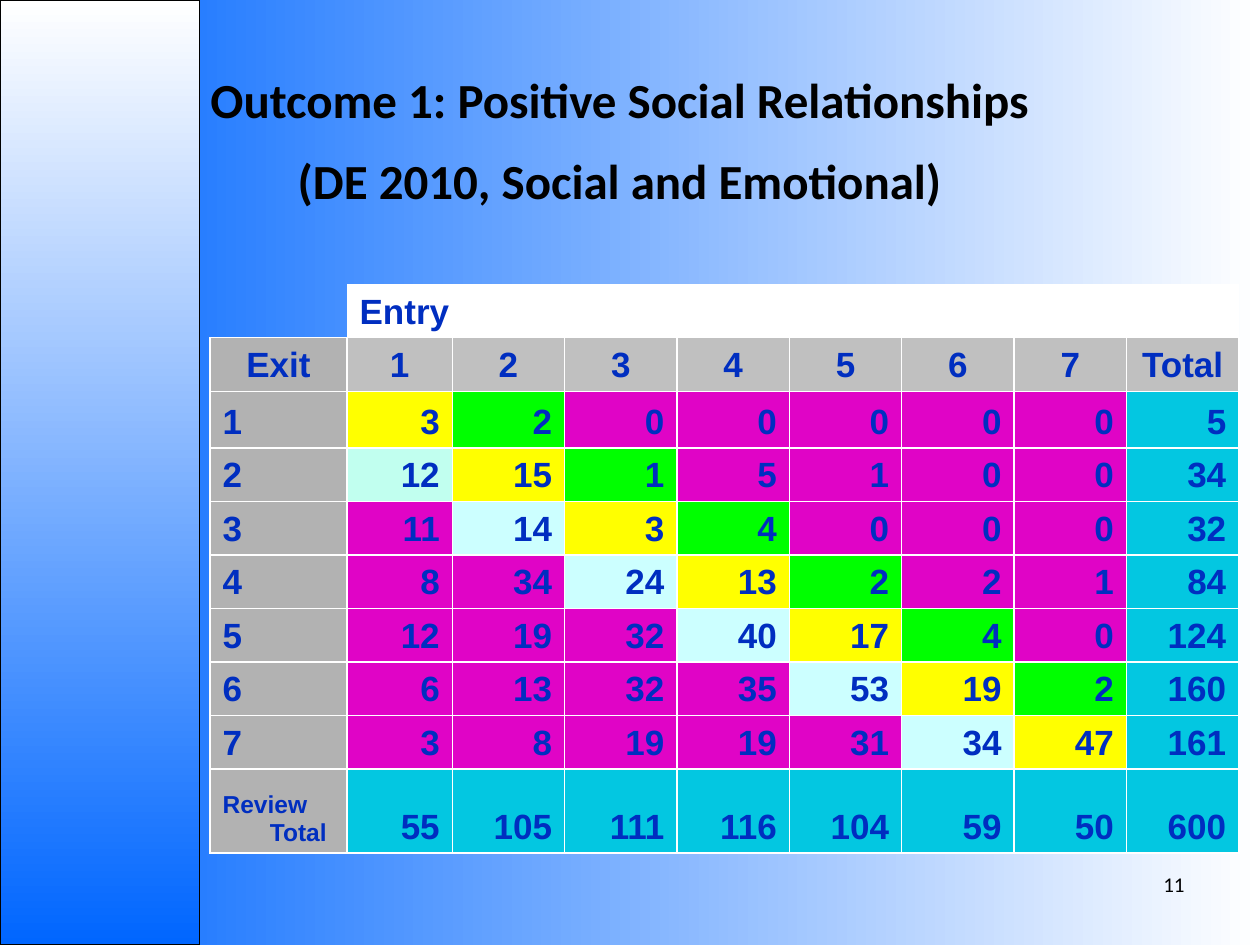
import pptx
import pptx.util
import pptx.dml.color
import pptx.enum.text
import pptx.enum.shapes
import pptx.oxml
import pptx.oxml.ns

Pt = pptx.util.Pt
ALIGN = pptx.enum.text.PP_ALIGN
ANCHOR = pptx.enum.text.MSO_ANCHOR
WHITE, BLACK, BLUE, NAVY = "FFFFFF", "000000", "0066FF", "002EC0"
GRAY, SILVER, CYAN = "B2B2B2", "C0C0C0", "03C7E1"
PINK, YELLOW, GREEN, PALE, MINT = "E004C6", "FFFF00", "00FF00", "CCFFFF", "C1FFEF"
HEADS = ["Exit", "1", "2", "3", "4", "5", "6", "7", "Total"]
COUNTS = [
    [3, 2, 0, 0, 0, 0, 0, 5],
    [12, 15, 1, 5, 1, 0, 0, 34],
    [11, 14, 3, 4, 0, 0, 0, 32],
    [8, 34, 24, 13, 2, 2, 1, 84],
    [12, 19, 32, 40, 17, 4, 0, 124],
    [6, 13, 32, 35, 53, 19, 2, 160],
    [3, 8, 19, 19, 31, 34, 47, 161],
]
TOTALS = [55, 105, 111, 116, 104, 59, 50, 600]


def color(code):
    """Turn a hex string into a colour."""
    return pptx.dml.color.RGBColor.from_string(code)


def shade(fill, first, last, angle):
    """Apply a two-stop linear gradient."""
    fill.gradient()
    fill.gradient_angle = angle
    for stop, code, place in zip(fill.gradient_stops, (first, last), (0, 1)):
        stop.color.rgb = color(code)
        stop.position = place


def style(para, size, name, code, bold, align):
    """Format the runs of a paragraph."""
    para.alignment = align
    for run in para.runs:
        run.font.size = Pt(size)
        run.font.name = name
        run.font.bold = bold
        run.font.color.rgb = color(code)


def panel(slide, left, top, width, height):
    """Draw the shaded side panel."""
    rect = slide.shapes.add_shape(
        pptx.enum.shapes.MSO_SHAPE.RECTANGLE, Pt(left), Pt(top), Pt(width), Pt(height))
    rect.shadow.inherit = False
    shade(rect.fill, WHITE, BLUE, 270)
    rect.line.color.rgb = color(BLACK)
    rect.line.width = Pt(0.75)


def label(slide, left, top, width, height, lines, size, bold, align, anchor):
    """Place a text box with one paragraph per line."""
    box = slide.shapes.add_textbox(Pt(left), Pt(top), Pt(width), Pt(height))
    frame = box.text_frame
    frame.word_wrap = True
    frame.vertical_anchor = anchor
    frame.text = "\n".join(lines)
    for index, para in enumerate(frame.paragraphs):
        style(para, size, "Calibri", BLACK, bold, align)
        if index:
            para.space_before = Pt(13)


def border(cell, sides):
    """Draw white borders on the given sides and clear the others."""
    props = cell._tc.get_or_add_tcPr()
    for index, side in enumerate("LRTB"):
        paint = ('<a:solidFill><a:srgbClr val="FFFFFF"/></a:solidFill>'
                 if side in sides else "<a:noFill/>")
        props.insert(index, pptx.oxml.parse_xml(
            f'<a:ln{side} {pptx.oxml.ns.nsdecls("a")} w="12700">{paint}</a:ln{side}>'))


def fill_cell(cell, text, code, align, size=20, sides="LRTB"):
    """Set the text, fill and borders of a table cell."""
    cell.text = text
    cell.vertical_anchor = ANCHOR.BOTTOM
    para = cell.text_frame.paragraphs[0]
    props = para._p.get_or_add_pPr()
    props.set("marL", str(Pt(27)))
    props.set("indent", str(-Pt(27)))
    style(para, size, "Arial", NAVY, True, align)
    if code:
        cell.fill.solid()
        cell.fill.fore_color.rgb = color(code)
    else:
        cell.fill.background()
    border(cell, sides)


def tint(row, col):
    """Choose the fill of a count by its distance from the diagonal."""
    if col == 7:
        return CYAN
    if (row, col) == (1, 0):
        return MINT
    return {-1: PALE, 0: YELLOW, 1: GREEN}.get(col - row, PINK)


def matrix(slide, left, top, width, height):
    """Build the table of entry and exit ratings."""
    table = slide.shapes.add_table(11, 9, Pt(left), Pt(top), Pt(width), Pt(height)).table
    table.first_row = table.horz_banding = False
    wide = (width - 78.3 - 60.2) / 7
    for col, size in zip(table.columns, [78.3, 60.2] + [wide] * 7):
        col.width = Pt(size)
    tall = (height - 32.4 - 48) / 9
    for row, size in zip(table.rows, [tall] * 3 + [32.4] + [tall] * 6 + [48]):
        row.height = Pt(size)
    for col, head in enumerate(HEADS):
        fill_cell(table.cell(0, col), "", None, ALIGN.LEFT, sides="")
        fill_cell(table.cell(1, col), "Entry" if col == 1 else "",
                  WHITE if col else None, ALIGN.LEFT, sides="B")
        fill_cell(table.cell(2, col), head, SILVER if col else GRAY, ALIGN.CENTER)
    for row, counts in enumerate(COUNTS):
        fill_cell(table.cell(row + 3, 0), str(row + 1), GRAY, ALIGN.LEFT)
        for col, count in enumerate(counts):
            fill_cell(table.cell(row + 3, col + 1), str(count), tint(row, col), ALIGN.RIGHT)
    fill_cell(table.cell(10, 0), "Review Total", GRAY, ALIGN.LEFT, 14)
    for col, total in enumerate(TOTALS, 1):
        fill_cell(table.cell(10, col), str(total), CYAN, ALIGN.RIGHT)
    for row, col in ((0, 0), (1, 1)):
        table.cell(row, col).merge(table.cell(row, col + 1))


def main():
    """Build the outcome slide and save it."""
    deck = pptx.Presentation()
    deck.slide_width, deck.slide_height = Pt(720), Pt(540)
    slide = deck.slides.add_slide(deck.slide_layouts[6])
    shade(slide.background.fill, BLUE, WHITE, 0)
    panel(slide, 0, 0, 114, 540)
    matrix(slide, 120, 131.8, 588, 355.8)
    label(slide, 30, 36, 648, 92,
          ["Outcome 1: Positive Social Relationships", "(DE 2010, Social and Emotional)"],
          28, True, ALIGN.CENTER, ANCHOR.TOP)
    label(slide, 576, 480, 108, 36, ["11"], 12, False, ALIGN.RIGHT, ANCHOR.BOTTOM)
    deck.save("out.pptx")


if __name__ == "__main__":
    main()
